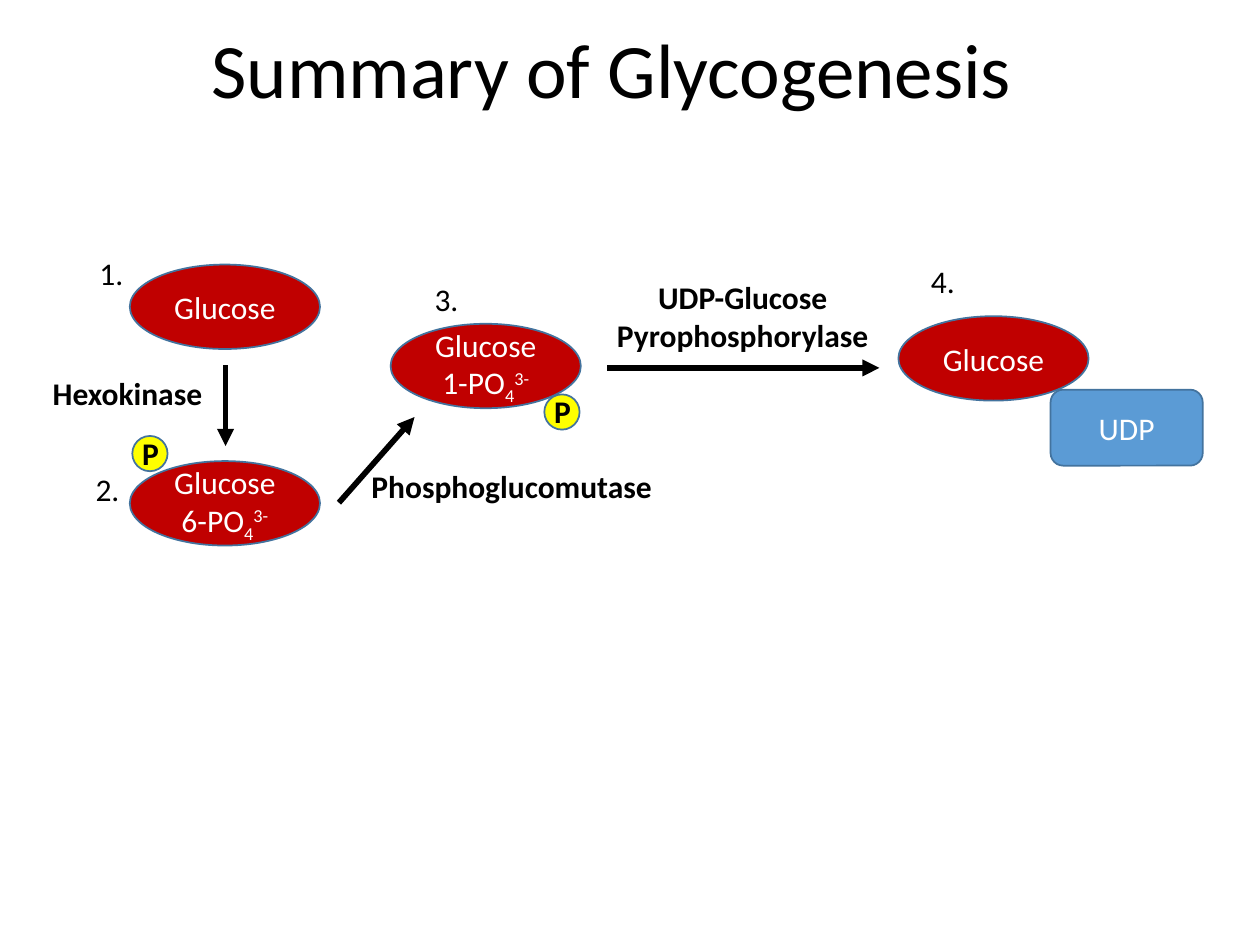
import pptx
import pptx.util
import pptx.dml.color
import pptx.enum.shapes
import pptx.enum.text
import pptx.oxml.ns
import lxml.etree

RGB = pptx.dml.color.RGBColor
BLACK = RGB(0x00, 0x00, 0x00)
WHITE = RGB(0xFF, 0xFF, 0xFF)
RED = RGB(0xC0, 0x00, 0x00)
YELLOW = RGB(0xFF, 0xFF, 0x00)
BLUE = RGB(0x5B, 0x9B, 0xD5)
EDGE = RGB(0x43, 0x73, 0x9E)

SHAPE = pptx.enum.shapes.MSO_SHAPE
ALIGN = pptx.enum.text.PP_ALIGN
ANCHOR = pptx.enum.text.MSO_ANCHOR
FIT = pptx.enum.text.MSO_AUTO_SIZE

# Grid: 100 columns by 75 rows of square cells
WIDTH = pptx.util.Inches(10)
HEIGHT = pptx.util.Inches(7.5)
CELL = WIDTH / 100


def grid(*cells):
    return [round(cell * CELL) for cell in cells]


def write(frame, lines, size=18, color=BLACK, bold=False, align=ALIGN.LEFT):
    """Each line is a list of (text, baseline shift in percent)."""
    for i, line in enumerate(lines):
        para = frame.paragraphs[0] if i == 0 else frame.add_paragraph()
        para.alignment = align
        for text, shift in line:
            run = para.add_run()
            run.text = text
            font = run.font
            font.name, font.size, font.bold = "Calibri", pptx.util.Pt(size), bold
            font.color.rgb = color
            if shift:
                run._r.get_or_add_rPr().set("baseline", str(shift * 1000))


def label(parent, box, texts, wrap=False, **style):
    frame = parent.add_textbox(*grid(*box)).text_frame
    frame.word_wrap = wrap
    frame.auto_size = FIT.SHAPE_TO_FIT_TEXT
    write(frame, [[(text, 0)] for text in texts], **style)


def solid(parent, kind, box, fill, lines=()):
    shape = parent.add_shape(kind, *grid(*box))
    shape.shadow.inherit = False
    shape.fill.solid()
    shape.fill.fore_color.rgb = fill
    shape.line.color.rgb = EDGE
    shape.line.width = pptx.util.Pt(1)
    shape.text_frame.vertical_anchor = ANCHOR.MIDDLE
    write(shape.text_frame, lines, color=WHITE, align=ALIGN.CENTER)


def title(slide, box, text):
    frame = slide.shapes.add_textbox(*grid(*box)).text_frame
    frame.word_wrap = True
    frame.vertical_anchor = ANCHOR.MIDDLE
    write(frame, [[(text, 0)]], size=44)
    frame.paragraphs[0].line_spacing = 0.9


def badge(slide, left, top):
    """Phosphate mark: a disc with its letter."""
    group = slide.shapes.add_group_shape().shapes
    solid(group, SHAPE.OVAL, (left, top, 2.8, 2.8), YELLOW)
    label(group, (left - 0.2, top - 0.65, 3.3, 4), ["P"], wrap=True, bold=True)


def sugar(slide, box, step, tag, carbon=None, mark=None, udp=False):
    """Numbered glucose; tag and mark are offsets from the box corner."""
    left, top, width, height = box
    lines = [[("Glucose", 0)]]
    if carbon:
        lines.append([(f"{carbon}-PO", 0), ("4", -25), ("3-", 30)])
    if mark:
        badge(slide, left + mark[0], top + mark[1])
    solid(slide.shapes, SHAPE.OVAL, box, RED, lines)
    if udp:
        corner = (left + 0.8 * width, top + 0.87 * height)
        solid(slide.shapes, SHAPE.FLOWCHART_ALTERNATE_PROCESS,
              (*corner, 0.8 * width, 0.9 * height), BLUE, [[("UDP", 0)]])
    label(slide.shapes, (left + tag[0], top + tag[1], 3.9, 4), [f"{step}."])


def enzyme(slide, ends, box, names):
    """Reaction arrow with the enzyme's name."""
    line = slide.shapes.add_connector(
        pptx.enum.shapes.MSO_CONNECTOR.STRAIGHT, *grid(*ends))
    line.line.color.rgb = BLACK
    line.line.width = pptx.util.Pt(3.25)
    qn = pptx.oxml.ns.qn
    head = lxml.etree.SubElement(line.line._get_or_add_ln(), qn("a:tailEnd"))
    head.set("type", "triangle")
    lxml.etree.SubElement(line._element.spPr, qn("a:effectLst"))
    label(slide.shapes, box, names, bold=True,
          align=ALIGN.CENTER if len(names) > 1 else ALIGN.LEFT)


def main():
    deck = pptx.Presentation()
    deck.slide_width, deck.slide_height = WIDTH, HEIGHT
    slide = deck.slides.add_slide(deck.slide_layouts[6])
    title(slide, (15.8, 1.6, 78.9, 8.5), "Summary of Glycogenesis")

    # Molecules
    oval = (15.1, 6.7)
    sugar(slide, (10.3, 21, *oval), 1, (-3.4, -1.3))
    sugar(slide, (10.3, 36.6, *oval), 2, (-3.7, 0.2), carbon=6, mark=(0.2, -2))
    sugar(slide, (31, 25.7, *oval), 3, (2.5, -4), carbon=1, mark=(12.2, 5.6))
    sugar(slide, (71.3, 25.1, *oval), 4, (1.6, -4.8), udp=True)

    # Reactions
    enzyme(slide, (17.9, 29, 17.9, 35.4), (3.2, 29.2, 14, 4), ["Hexokinase"])
    enzyme(slide, (26.9, 39.9, 32.9, 33.1), (28.5, 36.6, 24.4, 4),
           ["Phosphoglucomutase"])
    enzyme(slide, (48.2, 29.2, 69.8, 29.2), (47.9, 21.6, 22.1, 7.1),
           ["UDP-Glucose", "Pyrophosphorylase"])
    deck.save("out.pptx")


if __name__ == "__main__":
    main()
